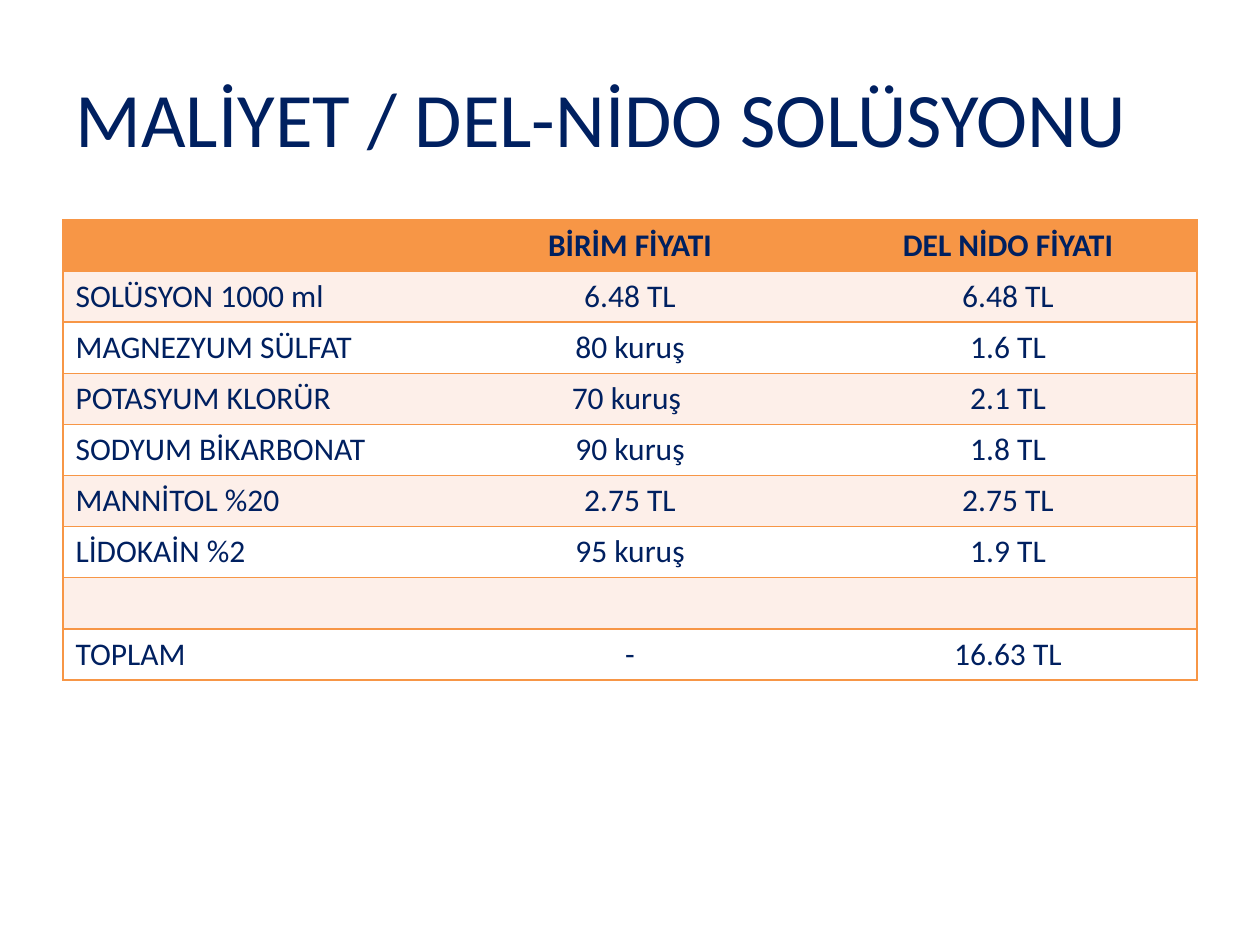
"""Build a slide with the cost table of the del Nido solution."""
from lxml import etree
from pptx import Presentation
from pptx import util as u
from pptx.dml.color import RGBColor
from pptx.enum import text
from pptx.oxml.ns import qn

TITLE = "MALİYET / DEL-NİDO SOLÜSYONU"
ROWS = [
    ("", "BİRİM FİYATI", "DEL NİDO FİYATI"),
    ("SOLÜSYON 1000 ml", "6.48 TL", "6.48 TL"),
    ("MAGNEZYUM SÜLFAT", "80 kuruş", "1.6 TL"),
    ("POTASYUM KLORÜR", "70 kuruş ", "2.1 TL"),
    ("SODYUM BİKARBONAT", "90 kuruş", "1.8 TL"),
    ("MANNİTOL %20", "2.75 TL", "2.75 TL"),
    ("LİDOKAİN %2", "95 kuruş", "1.9 TL"),
    ("", "", ""),
    ("TOPLAM", "-", "16.63 TL"),
]
NAVY = RGBColor(0x00, 0x20, 0x60)
ORANGE = RGBColor(0xF7, 0x96, 0x46)
PEACH = RGBColor(0xFD, 0xEF, 0xE9)
WHITE = RGBColor(0xFF, 0xFF, 0xFF)
LEFT, WIDTH = 63, 1134
TOP, ROW = 220, 51
HEAD = {"name": "Calibri", "size": u.Pt(44), "bold": False}
BODY = {"name": "Calibri", "size": u.Pt(18)}


def px(num):
    return u.Emu(round(num * 914400 / 126))


def style(para, form):
    for run in para.runs:
        for key, val in form.items():
            setattr(run.font, key, val)
        run.font.color.rgb = NAVY


def border(cell, shown):
    props = cell._tc.get_or_add_tcPr()
    for side in "LRTB":
        line = etree.SubElement(props, qn(f"a:ln{side}"), w=str(u.Pt(1)))
        if side in shown:
            fill = etree.SubElement(line, qn("a:solidFill"))
            etree.SubElement(fill, qn("a:srgbClr"), val=str(ORANGE))
        else:
            etree.SubElement(line, qn("a:noFill"))


def add_title(slide):
    title = slide.shapes.title
    box = {"left": LEFT, "top": 38, "width": WIDTH, "height": 158}
    for key, val in box.items():
        setattr(title, key, px(val))
    frame = title.text_frame
    frame.text = TITLE
    frame.vertical_anchor = text.MSO_ANCHOR.MIDDLE
    para = frame.paragraphs[0]
    para.alignment = text.PP_ALIGN.LEFT
    style(para, HEAD)


def add_costs(slide):
    cols = len(ROWS[0])
    size = [px(n) for n in (LEFT, TOP, WIDTH, ROW * len(ROWS))]
    table = slide.shapes.add_table(len(ROWS), cols, *size).table
    sides = ["LTB"] + ["TB"] * (cols - 2) + ["RTB"]
    for i, row in enumerate(ROWS):
        shade = ORANGE if i == 0 else PEACH if i % 2 else WHITE
        for j, word in enumerate(row):
            cell = table.cell(i, j)
            border(cell, sides[j])
            cell.fill.solid()
            cell.fill.fore_color.rgb = shade
            para = cell.text_frame.paragraphs[0]
            para.alignment = text.PP_ALIGN.CENTER if j else text.PP_ALIGN.LEFT
            if word:
                para.add_run().text = word
                style(para, {**BODY, "bold": i == 0})


def main():
    deck = Presentation()
    deck.slide_width, deck.slide_height = px(1260), px(945)
    slide = deck.slides.add_slide(deck.slide_layouts[5])
    add_title(slide)
    add_costs(slide)
    deck.save("out.pptx")


if __name__ == "__main__":
    main()
